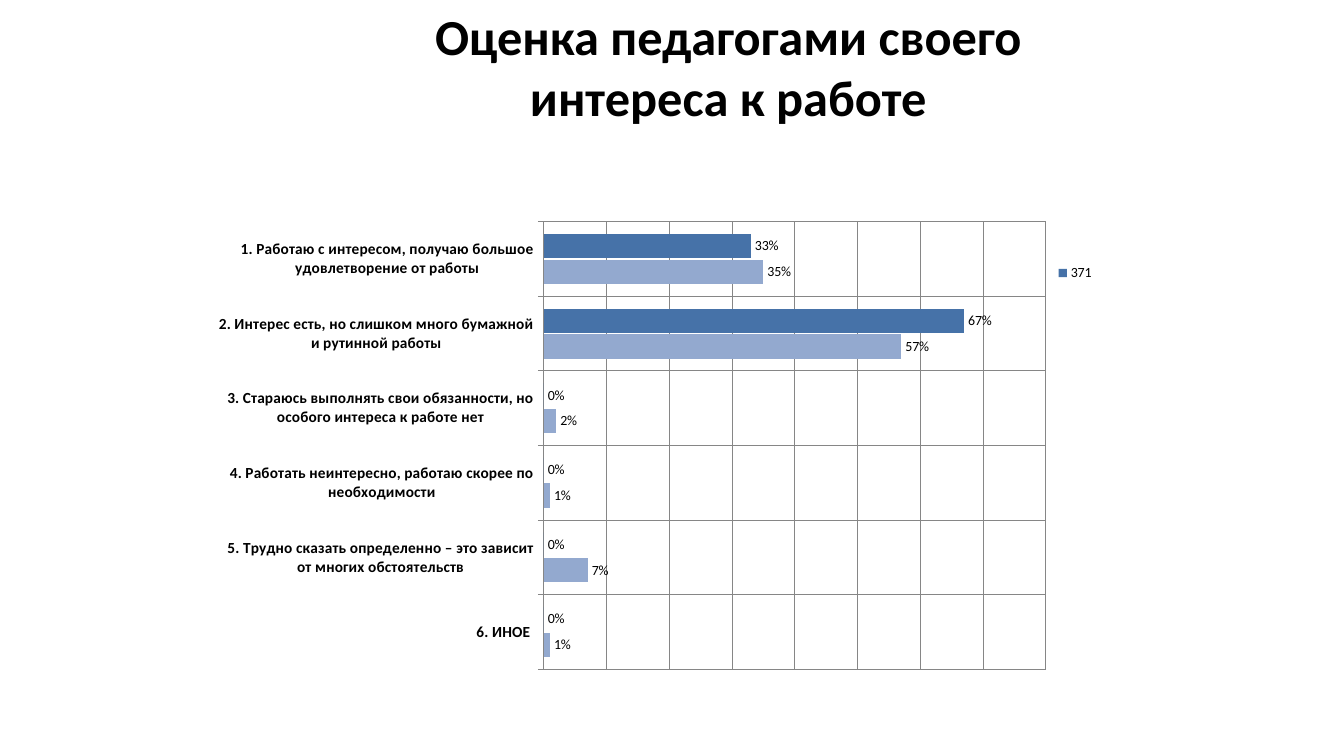
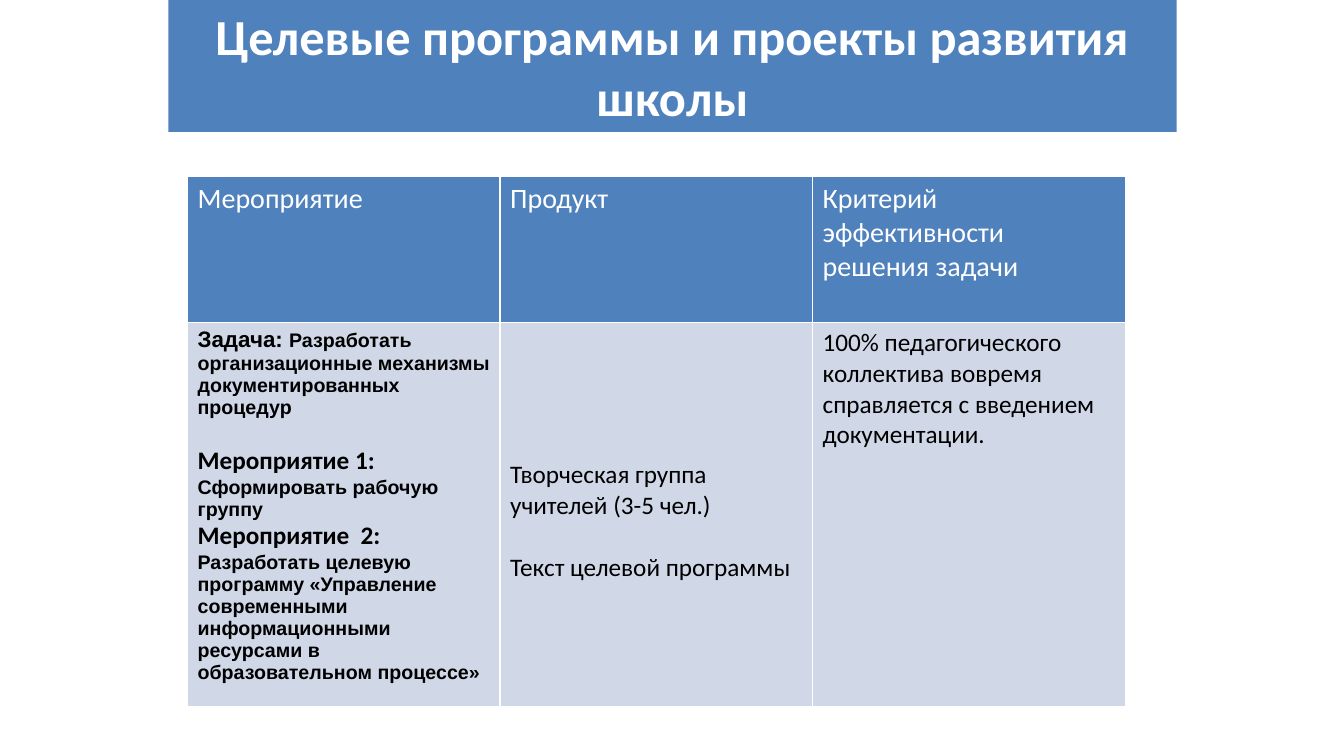
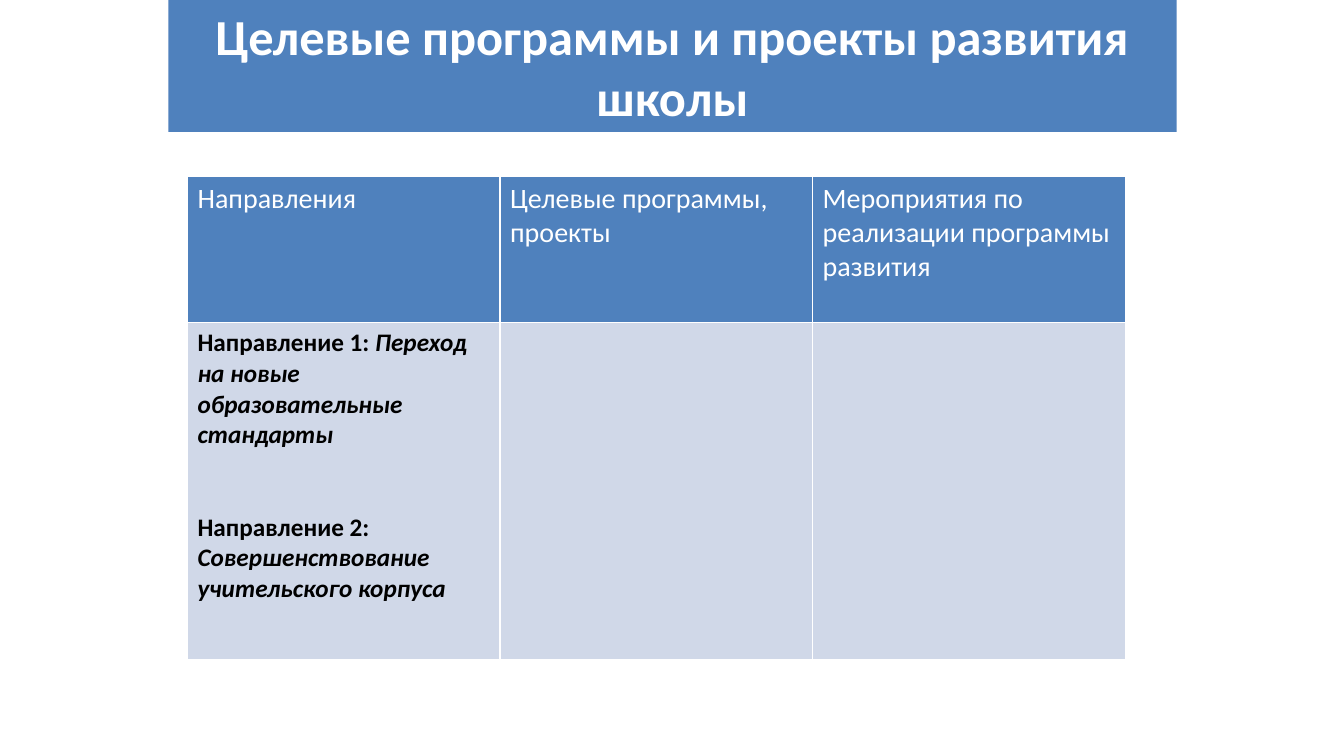
"""Build three slides on teachers' interest and school development programmes."""
import pptx
import pptx.chart.data
import pptx.dml.color
import pptx.enum.chart
import pptx.enum.shapes
import pptx.enum.text
import pptx.oxml
import pptx.oxml.ns
import pptx.util
from pptx.util import Inches

BLUE, PALE, WHITE, BLACK, GRAY = "4F81BD", "D0D8E8", "FFFFFF", "000000", "868686"
SERIES_COLORS = ("4672A8", "93A9CF")
FONT = "Calibri"
TITLE_HEIGHT = 1.31
COLUMN_WIDTH = 3.1
ROW_HEIGHTS = (1.45, 3.34)
PROGRAMS_TITLE = "Целевые программы и проекты развития школы"


def rgb(color):
    """Turn a hex string into a colour."""
    return pptx.dml.color.RGBColor.from_string(color)


def paint(fill, color):
    """Make a fill solid in one colour."""
    fill.solid()
    fill.fore_color.rgb = rgb(color)


def style_font(font, size, color=BLACK, bold=False, italic=False, name=FONT):
    """Set every property of a font."""
    font.size = pptx.util.Pt(size)
    font.name = name
    font.bold = bold
    font.italic = italic
    font.color.rgb = rgb(color)


def add_span(para, text, **style):
    """Add a formatted run to a paragraph."""
    span = para.add_run()
    span.text = text
    style_font(span.font, **style)


def add_title(slide, text, left, width, band=None):
    """Add the slide title, on a coloured band if one is given."""
    place = Inches(left), 0, Inches(width), Inches(TITLE_HEIGHT)
    if band:
        box = slide.shapes.add_shape(pptx.enum.shapes.MSO_SHAPE.RECTANGLE, *place)
        box.shadow.inherit = False
        paint(box.fill, band)
        box.line.fill.background()
    else:
        box = slide.shapes.add_textbox(*place)
    frame = box.text_frame
    frame.word_wrap = True
    frame.vertical_anchor = pptx.enum.text.MSO_ANCHOR.MIDDLE
    para = frame.paragraphs[0]
    para.alignment = pptx.enum.text.PP_ALIGN.CENTER
    add_span(para, text, size=36, color=WHITE if band else BLACK, bold=True)


def add_borders(cell):
    """Draw thin white borders around a cell."""
    properties = cell._tc.get_or_add_tcPr()
    namespace = pptx.oxml.ns.nsdecls("a")
    for index, side in enumerate("LRTB"):
        border = pptx.oxml.parse_xml(
            f'<a:ln{side} {namespace} w="12700"><a:solidFill>'
            f'<a:srgbClr val="{WHITE}"/></a:solidFill></a:ln{side}>')
        properties.insert(index, border)


def fill_cell(cell, paragraphs, color):
    """Fill a cell with paragraphs, each a space before and a list of spans."""
    paint(cell.fill, color)
    add_borders(cell)
    frame = cell.text_frame
    for index, (space, spans) in enumerate(paragraphs):
        para = frame.add_paragraph() if index else frame.paragraphs[0]
        if space:
            para.space_before = pptx.util.Pt(space)
        for text, style in spans:
            add_span(para, text, **style)


def add_program_table(slide, headers, body):
    """Add a table of one header row and one body row."""
    frame = slide.shapes.add_table(
        2, len(headers), Inches(1.86), Inches(1.75),
        Inches(COLUMN_WIDTH * len(headers)), Inches(sum(ROW_HEIGHTS)))
    table = frame.table
    table.horz_banding = False
    for row, height in zip(table.rows, ROW_HEIGHTS):
        row.height = Inches(height)
    for column, (header, paragraphs) in enumerate(zip(headers, body)):
        table.columns[column].width = Inches(COLUMN_WIDTH)
        heading = [(0, [(header, dict(size=20, color=WHITE))])]
        fill_cell(table.cell(0, column), heading, BLUE)
        fill_cell(table.cell(1, column), paragraphs, PALE)
    return table


def manual_layout(x, y, width=None, height=None):
    """Return a chart layout element placed by fractions of the chart."""
    target = '<c:layoutTarget val="inner"/>' if width else ""
    size = f'<c:w val="{width}"/><c:h val="{height}"/>' if width else ""
    return pptx.oxml.parse_xml(
        f'<c:layout {pptx.oxml.ns.nsdecls("c")}><c:manualLayout>{target}'
        '<c:xMode val="edge"/><c:yMode val="edge"/>'
        f'<c:x val="{x}"/><c:y val="{y}"/>{size}</c:manualLayout></c:layout>')


def place_part(part, index, layout):
    """Replace the layout of a chart part."""
    for old in part.findall(pptx.oxml.ns.qn("c:layout")):
        part.remove(old)
    part.insert(index, layout)


def style_axes(chart):
    """Format the category axis, the hidden value axis and the grid."""
    categories, values = chart.category_axis, chart.value_axis
    categories.reverse_order = True
    categories.major_tick_mark = pptx.enum.chart.XL_TICK_MARK.OUTSIDE
    style_font(categories.tick_labels.font, 11, bold=True)
    values.visible = False
    values.minimum_scale, values.maximum_scale, values.major_unit = 0, 0.8, 0.1
    for axis in (categories, values):
        axis.has_major_gridlines = True
        for line in (axis.format.line, axis.major_gridlines.format.line):
            line.color.rgb = rgb(GRAY)
            line.width = pptx.util.Pt(0.75)


def style_legend(chart):
    """Show a legend that leaves out the second series."""
    chart.has_legend = True
    chart.legend.position = pptx.enum.chart.XL_LEGEND_POSITION.RIGHT
    chart.legend.include_in_layout = False
    style_font(chart.legend.font, 10)
    legend = chart._chartSpace.find(".//" + pptx.oxml.ns.qn("c:legend"))
    place_part(legend, 1, manual_layout(0.92, 0.17))
    legend.insert(1, pptx.oxml.parse_xml(
        f'<c:legendEntry {pptx.oxml.ns.nsdecls("c")}><c:idx val="0"/>'
        '<c:delete val="1"/></c:legendEntry>'))


def add_bar_chart(slide, categories, series):
    """Add a clustered bar chart of shares."""
    data = pptx.chart.data.CategoryChartData(number_format="0%")
    data.categories = categories
    for name, values in series:
        data.add_series(name, values)
    chart = slide.shapes.add_chart(
        pptx.enum.chart.XL_CHART_TYPE.BAR_CLUSTERED,
        Inches(2.17), Inches(1.75), Inches(9), Inches(4.95), data).chart
    chart.has_title = False
    style_font(chart.font, 10)
    plot = chart.plots[0]
    plot.gap_width, plot.overlap, plot.vary_by_categories = 100, -6, False
    for bars, color in zip(plot.series, SERIES_COLORS):
        paint(bars.format.fill, color)
        labels = bars.data_labels
        labels.show_value = True
        labels.number_format = "0%"
        labels.number_format_is_linked = False
        labels.position = pptx.enum.chart.XL_LABEL_POSITION.OUTSIDE_END
        style_font(labels.font, 10)
    style_axes(chart)
    style_legend(chart)
    area = chart._chartSpace.find(".//" + pptx.oxml.ns.qn("c:plotArea"))
    place_part(area, 0, manual_layout(0.355, 0.091, 0.556, 0.897))


def build_interest_slide(slide):
    """Show how teachers rate their interest in work."""
    add_title(slide, "Оценка педагогами своего интереса к работе", 3.28, 7.89)
    add_bar_chart(slide, [
        "1. Работаю с интересом, получаю большое удовлетворение от работы",
        "2. Интерес есть, но слишком много бумажной и рутинной работы",
        "3. Стараюсь выполнять свои обязанности, но особого интереса к работе нет",
        "4. Работать неинтересно, работаю скорее по необходимости",
        "5. Трудно сказать определенно – это зависит от многих обстоятельств",
        "6. ИНОЕ ",
    ], [
        ("371", (0.33, 0.67, 0, 0, 0, 0)),
        ("", (0.35, 0.57, 0.02, 0.01, 0.07, 0.01)),
    ])


def build_activities_slide(slide):
    """Show activities, their products and the success criterion."""
    plain = dict(size=18)
    label = dict(size=18, bold=True)
    task = dict(size=16, bold=True, name="Arial")
    detail = dict(size=14, bold=True, name="Arial")
    add_title(slide, PROGRAMS_TITLE, 1.67, 10, band=BLUE)
    activities = [
        (0, [("Задача: ", task),
             ("Разработать организационные механизмы документированных процедур", detail)]),
        (19.5, [("Мероприятие 1: ", label), ("Сформировать рабочую группу", detail)]),
        (0, [("Мероприятие  2:", label)]),
        (0, [("Разработать целевую программу «Управление современными информационными "
              "ресурсами в образовательном процессе»", detail)]),
    ]
    products = [
        (0, [("Творческая группа учителей (3-5 чел.)", plain)]),
        (22, [("Текст целевой программы", plain)]),
    ]
    criterion = [(0, [("100% педагогического коллектива вовремя справляется "
                       "с введением документации.", plain)])]
    table = add_program_table(
        slide, ["Мероприятие", "Продукт", "Критерий эффективности решения задачи"],
        [activities, products, criterion])
    product_cell = table.cell(1, 1)
    product_cell.vertical_anchor = pptx.enum.text.MSO_ANCHOR.MIDDLE
    product_cell.margin_top = Inches(0.19)


def build_directions_slide(slide):
    """Show the directions of development."""
    label = dict(size=18, bold=True)
    topic = dict(label, italic=True)
    add_title(slide, PROGRAMS_TITLE, 1.67, 10, band=BLUE)
    directions = [
        (0, [("Направление 1: ", label),
             ("Переход на новые образовательные стандарты", topic)]),
        (44, [("Направление 2: ", label),
              ("Совершенствование учительского корпуса", topic)]),
    ]
    add_program_table(
        slide, ["Направления", "Целевые программы, проекты",
                "Мероприятия по реализации программы развития"],
        [directions, [], []])


def main():
    """Build and save the deck."""
    deck = pptx.Presentation()
    deck.slide_width, deck.slide_height = Inches(13.33), Inches(7.5)
    for build in (build_interest_slide, build_activities_slide, build_directions_slide):
        build(deck.slides.add_slide(deck.slide_layouts[6]))
    deck.save("out.pptx")


if __name__ == "__main__":
    main()
